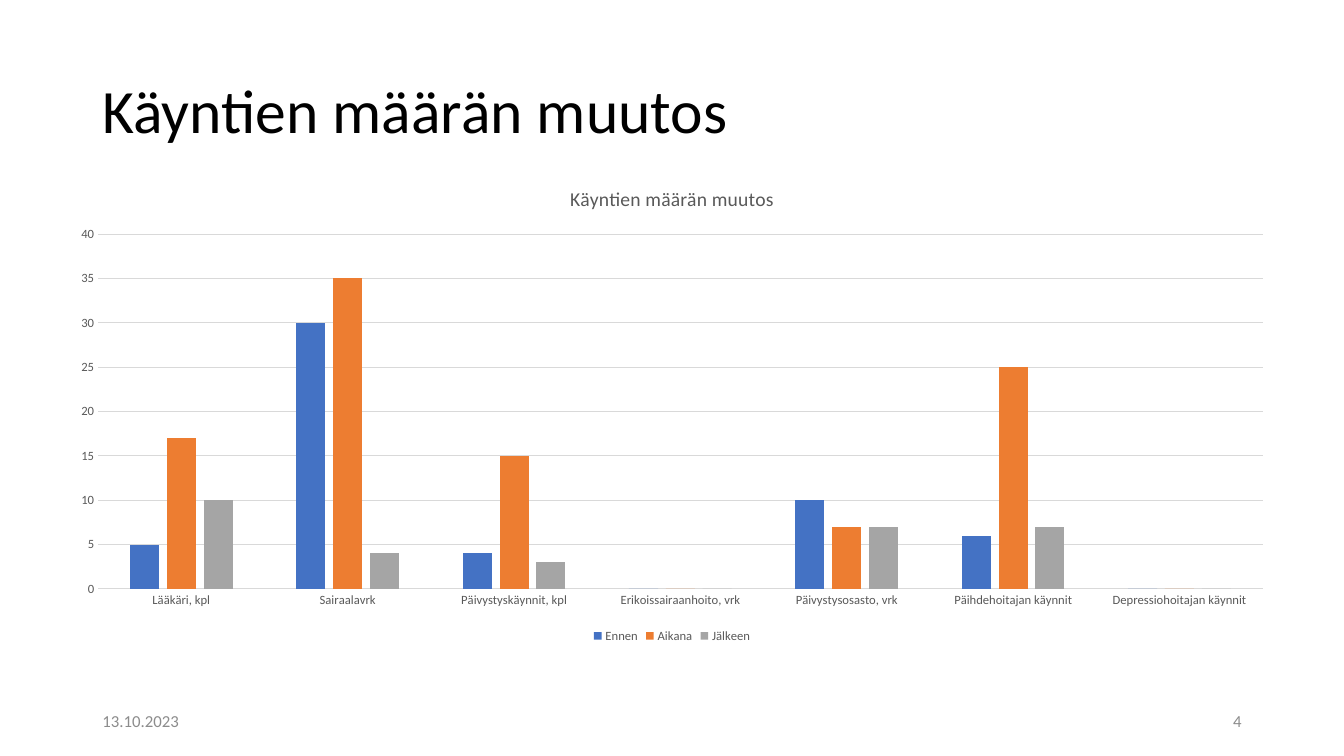
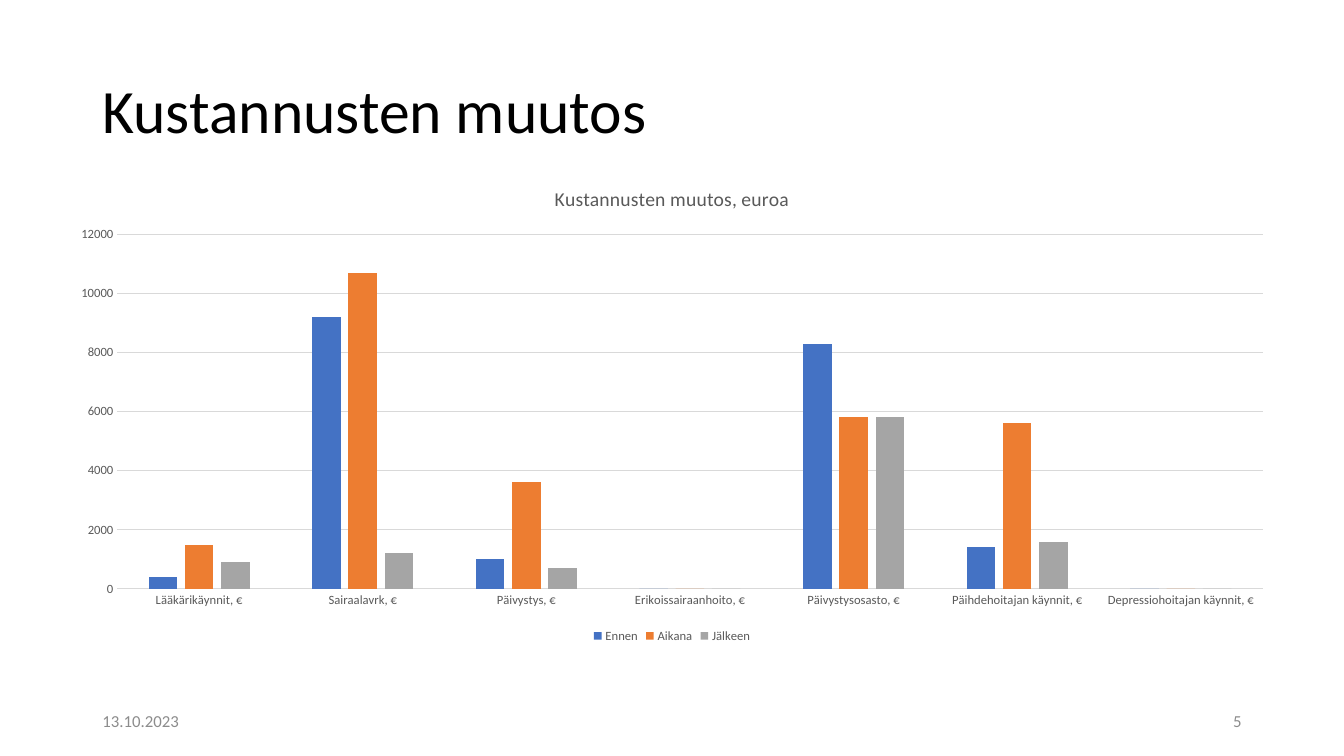
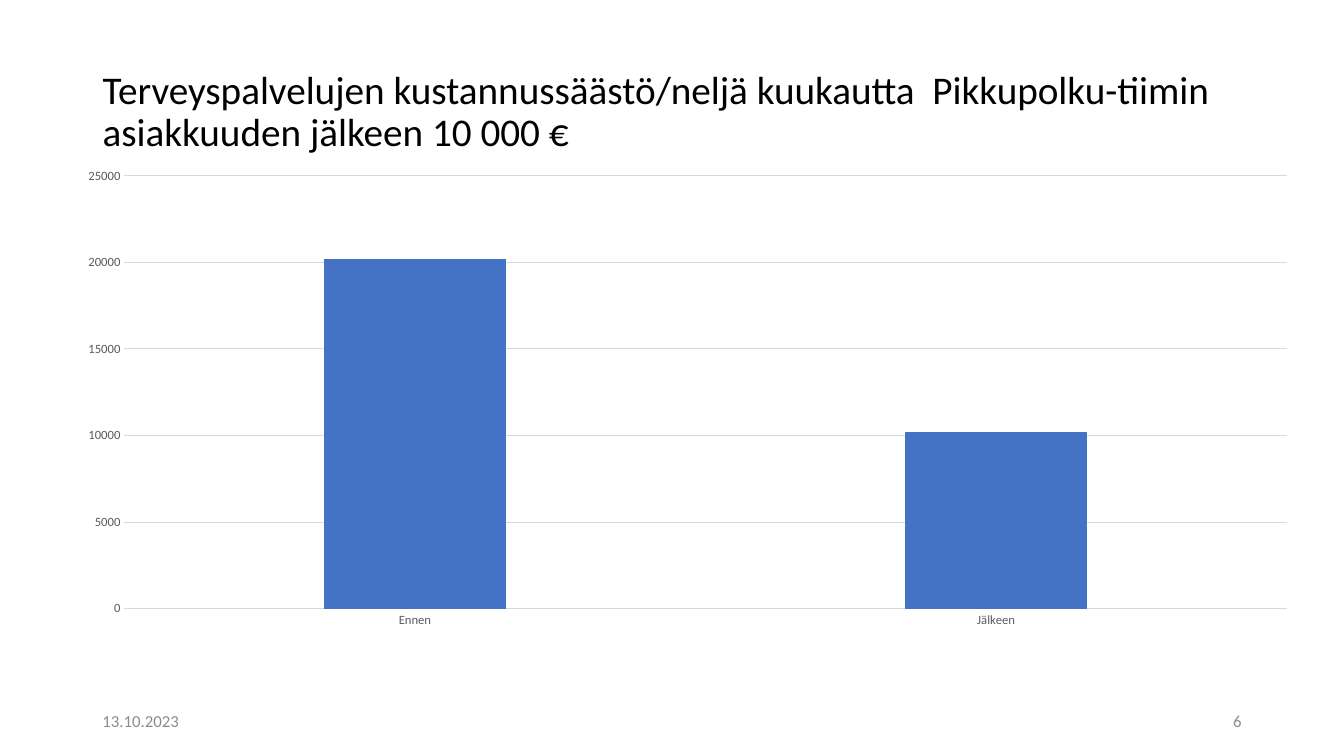
import pptx
import pptx.util
import pptx.chart.data
import pptx.dml.color
import pptx.enum.chart
import pptx.enum.text
import pptx.oxml

Cm = pptx.util.Cm
Pt = pptx.util.Pt

FONT = "Calibri"
DATE = "13.10.2023"
HUE = {"ink": "000000", "foot": "8C8C8C", "label": "595959", "grid": "D9D9D9",
       "bars": ["4472C4", "ED7D31", "A5A5A5"]}

WIDE, HIGH = 33.87, 19.05
EDGE = 2.33
HEAD = (EDGE, 1.01, WIDE - 2 * EDGE, 3.68)
PLOT = (1.43, 4.19, 31.01, 12.12)
FOOT = (EDGE, 17.66, WIDE - 2 * EDGE, 1.01)
PART = 7.62
INNER = {"x": 0.055, "y": 0.02, "w": 0.945, "h": 0.9}

DECK = [
    {"title": "Käyntien määrän muutos", "size": 44, "name": "Käyntien määrän muutos",
     "top": 40, "step": 5,
     "cats": ["Lääkäri, kpl", "Sairaalavrk", "Päivystyskäynnit, kpl",
              "Erikoissairaanhoito, vrk", "Päivystysosasto, vrk",
              "Päihdehoitajan käynnit", "Depressiohoitajan käynnit"],
     "rows": {"Ennen": [5, 30, 4, 0, 10, 6, 0],
              "Aikana": [17, 35, 15, 0, 7, 25, 0],
              "Jälkeen": [10, 4, 3, 0, 7, 7, 0]}},
    {"title": "Kustannusten muutos", "size": 44, "name": "Kustannusten muutos, euroa",
     "top": 12000, "step": 2000,
     "cats": ["Lääkärikäynnit, €", "Sairaalavrk, €", "Päivystys, €",
              "Erikoissairaanhoito, €", "Päivystysosasto, €",
              "Päihdehoitajan käynnit, €", "Depressiohoitajan käynnit, €"],
     "rows": {"Ennen": [400, 9200, 1000, 0, 8300, 1400, 0],
              "Aikana": [1500, 10700, 3600, 0, 5800, 5600, 0],
              "Jälkeen": [900, 1200, 700, 0, 5800, 1600, 0]}},
    {"title": "Terveyspalvelujen kustannussäästö/neljä kuukautta  Pikkupolku-tiimin "
              "asiakkuuden jälkeen 10 000 €",
     "size": 28, "name": None, "top": 25000, "step": 5000,
     "cats": ["Ennen", "Jälkeen"],
     "rows": {"Series 1": [20200, 10200]}},
]


def tint(code):
    return pptx.dml.color.RGBColor.from_string(code)


def style(font, size, code):
    font.name = FONT
    font.size = Pt(size)
    font.bold = False
    font.color.rgb = tint(code)


def write(shape, text, size, code, align):
    frame = shape.text_frame
    frame.word_wrap = True
    frame.auto_size = pptx.enum.text.MSO_AUTO_SIZE.NONE
    frame.vertical_anchor = pptx.enum.text.MSO_ANCHOR.MIDDLE
    para = frame.paragraphs[0]
    para.alignment = align
    run = para.add_run()
    run.text = text
    style(run.font, size, code)
    return para


def head(slide, box, text, size):
    shape = slide.shapes.title
    shape.left, shape.top, shape.width, shape.height = map(Cm, box)
    para = write(shape, text, size, HUE["ink"], pptx.enum.text.PP_ALIGN.LEFT)
    para.line_spacing = 0.9


def foot(slide, box, num):
    left, top, width, high = box
    side = pptx.enum.text.PP_ALIGN
    for x, text, align in ((left, DATE, side.LEFT),
                           (left + width - PART, str(num), side.RIGHT)):
        shape = slide.shapes.add_textbox(Cm(x), Cm(top), Cm(PART), Cm(high))
        write(shape, text, 12, HUE["foot"], align)


def rule(line):
    line.color.rgb = tint(HUE["grid"])
    line.width = Pt(0.75)


def axes(chart, top, step):
    cat, val = chart.category_axis, chart.value_axis
    for axis in (cat, val):
        axis.major_tick_mark = pptx.enum.chart.XL_TICK_MARK.NONE
        axis.minor_tick_mark = pptx.enum.chart.XL_TICK_MARK.NONE
        style(axis.tick_labels.font, 9, HUE["label"])
    rule(cat.format.line)
    cat.has_major_gridlines = False
    val.format.line.fill.background()
    val.has_major_gridlines = True
    rule(val.major_gridlines.format.line)
    val.minimum_scale = 0
    val.maximum_scale = top
    val.major_unit = step


def label(chart, name):
    chart.has_title = True
    run = chart.chart_title.text_frame.paragraphs[0].add_run()
    run.text = name
    style(run.font, 14, HUE["label"])
    chart.chart_title.include_in_layout = False
    chart.has_legend = True
    chart.legend.position = pptx.enum.chart.XL_LEGEND_POSITION.BOTTOM
    chart.legend.include_in_layout = False
    style(chart.legend.font, 9, HUE["label"])


def fix(chart):
    area = chart.plots[0]._element.getparent()
    for old in area.findall(pptx.oxml.ns.qn("c:layout")):
        area.remove(old)
    sizes = "".join(f'<c:{key} val="{num}"/>' for key, num in INNER.items())
    area.insert(0, pptx.oxml.parse_xml(
        f'<c:layout {pptx.oxml.ns.nsdecls("c")}><c:manualLayout>'
        '<c:layoutTarget val="inner"/><c:xMode val="edge"/><c:yMode val="edge"/>'
        f'{sizes}</c:manualLayout></c:layout>'))


def bars(slide, box, page):
    data = pptx.chart.data.CategoryChartData()
    data.categories = page["cats"]
    for name, vals in page["rows"].items():
        data.add_series(name, vals)
    kind = pptx.enum.chart.XL_CHART_TYPE.COLUMN_CLUSTERED
    chart = slide.shapes.add_chart(kind, *map(Cm, box), data).chart
    style(chart.font, 10, HUE["ink"])
    plot = chart.plots[0]
    plot.gap_width = 219
    plot.overlap = -27
    plot.vary_by_categories = False
    for row, code in zip(plot.series, HUE["bars"]):
        row.format.fill.solid()
        row.format.fill.fore_color.rgb = tint(code)
    axes(chart, page["top"], page["step"])
    if page["name"]:
        label(chart, page["name"])
    else:
        chart.has_title = False
        chart.has_legend = False
        fix(chart)


def main():
    deck = pptx.Presentation()
    deck.slide_width, deck.slide_height = Cm(WIDE), Cm(HIGH)
    for num, page in enumerate(DECK, 4):
        slide = deck.slides.add_slide(deck.slide_layouts[5])
        head(slide, HEAD, page["title"], page["size"])
        foot(slide, FOOT, num)
        bars(slide, PLOT, page)
    deck.save("out.pptx")


if __name__ == "__main__":
    main()
